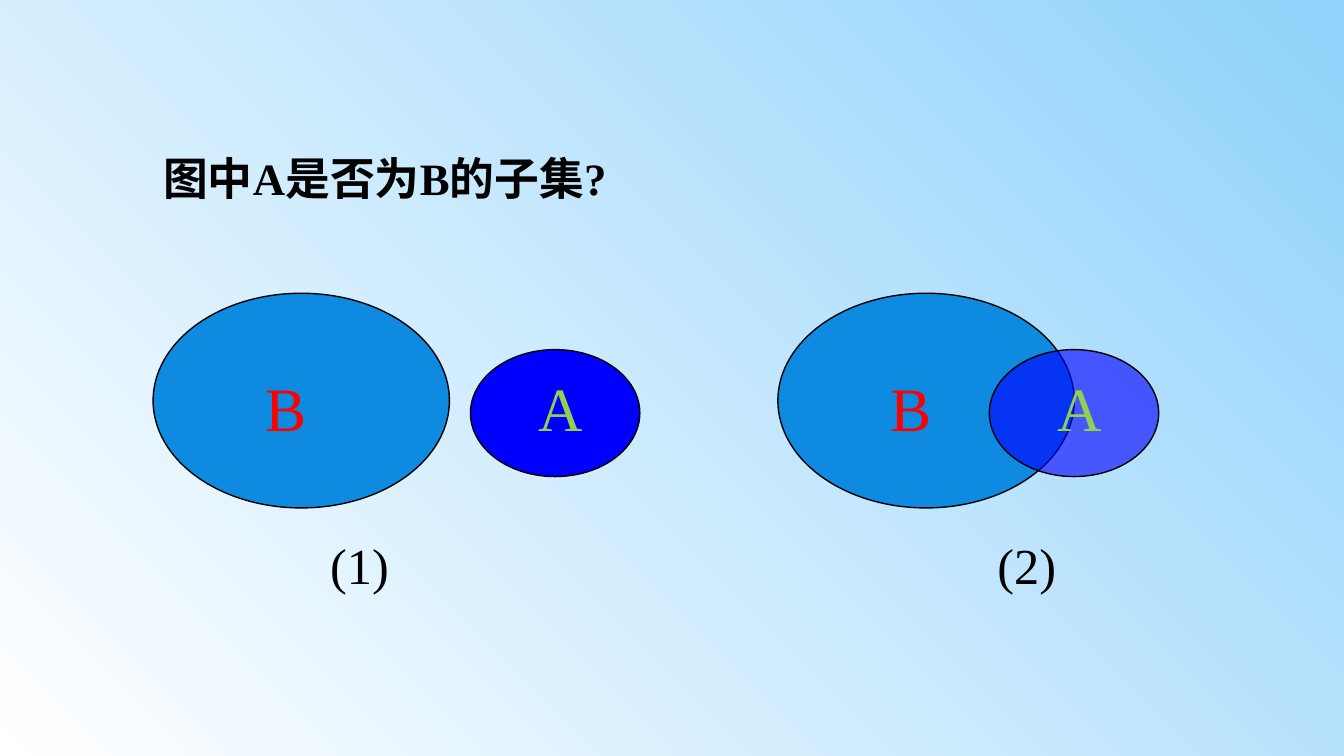
from dataclasses import dataclass

import pptx
import pptx.dml.color
import pptx.enum.shapes
import pptx.enum.text
import pptx.oxml
import pptx.oxml.ns
import pptx.util

Cm = pptx.util.Cm
Align = pptx.enum.text.PP_ALIGN
FONT = "Times New Roman"
LABEL_TOP = 9.19


@dataclass(frozen=True)
class SetStyle:
    letter: str
    top: float
    width: float
    height: float
    fill: str
    letter_color: str
    letter_inset: float


@dataclass(frozen=True)
class Diagram:
    caption: str
    caption_left: float
    b_left: float
    a_left: float
    a_opacity: int


SET_B = SetStyle("B", 7.39, 7.47, 5.41, "0E8BE0", "FF0000", 1.87)
SET_A = SetStyle("A", 8.81, 4.27, 3.2, "0000FF", "92D050", 0.8)
DIAGRAMS = [
    Diagram("(1)", 5.99, 3.86, 11.86, 100),
    Diagram("(2)", 22.81, 19.61, 24.94, 61),
]


def rgb(value: str) -> pptx.dml.color.RGBColor:
    return pptx.dml.color.RGBColor.from_string(value)


def write(frame, text: str, size: int, color: str, align, bold: bool = False) -> None:
    frame.word_wrap = True
    frame.vertical_anchor = pptx.enum.text.MSO_ANCHOR.TOP
    frame.auto_size = pptx.enum.text.MSO_AUTO_SIZE.SHAPE_TO_FIT_TEXT
    paragraph = frame.paragraphs[0]
    paragraph.alignment = align
    run = paragraph.add_run()
    run.text = text
    run.font.name = FONT
    run.font.size = pptx.util.Pt(size)
    run.font.bold = bold
    run.font.color.rgb = rgb(color)


def add_label(slide, text: str, left: float, top: float, width: float,
              height: float, size: int, color: str) -> None:
    label = slide.shapes.add_textbox(Cm(left), Cm(top), Cm(width), Cm(height))
    write(label.text_frame, text, size, color, Align.CENTER)


def add_set(slide, style: SetStyle, left: float, opacity: int = 100) -> None:
    ellipse = slide.shapes.add_shape(
        pptx.enum.shapes.MSO_SHAPE.OVAL,
        Cm(left), Cm(style.top), Cm(style.width), Cm(style.height))
    ellipse.shadow.inherit = False
    ellipse.fill.solid()
    ellipse.fill.fore_color.rgb = rgb(style.fill)
    ellipse.line.color.rgb = rgb("000000")
    ellipse.line.width = pptx.util.Pt(1)
    if opacity < 100:
        fill_color = ellipse.fill._xPr.find(".//" + pptx.oxml.ns.qn("a:srgbClr"))
        alpha = pptx.oxml.parse_xml(
            f'<a:alpha {pptx.oxml.ns.nsdecls("a")} val="{opacity * 1000}"/>')
        fill_color.append(alpha)
    add_label(slide, style.letter, left + style.letter_inset, LABEL_TOP,
              2.95, 2.11, 44, style.letter_color)


def paint_background(slide) -> None:
    fill = slide.background.fill
    fill.gradient()
    fill.gradient_angle = 45
    for stop, color in zip(fill.gradient_stops, ("FFFFFF", "8FD2FB")):
        stop.color.rgb = rgb(color)


def add_question(slide) -> None:
    question = slide.shapes.title
    question.left, question.top = Cm(3.86), Cm(3.68)
    question.width, question.height = Cm(24.54), Cm(1.63)
    write(question.text_frame, "图中A是否为B的子集?", 32, "000000", Align.LEFT, True)


def add_diagram(slide, diagram: Diagram) -> None:
    add_set(slide, SET_B, diagram.b_left)
    add_set(slide, SET_A, diagram.a_left, diagram.a_opacity)
    add_label(slide, diagram.caption, diagram.caption_left, 13.34,
              6.15, 1.8, 36, "000000")


def main() -> None:
    deck = pptx.Presentation()
    deck.slide_width, deck.slide_height = Cm(33.88), Cm(19.05)
    slide = deck.slides.add_slide(deck.slide_layouts.get_by_name("Title Only"))
    paint_background(slide)
    add_question(slide)
    for diagram in DIAGRAMS:
        add_diagram(slide, diagram)
    deck.save("out.pptx")


if __name__ == "__main__":
    main()
